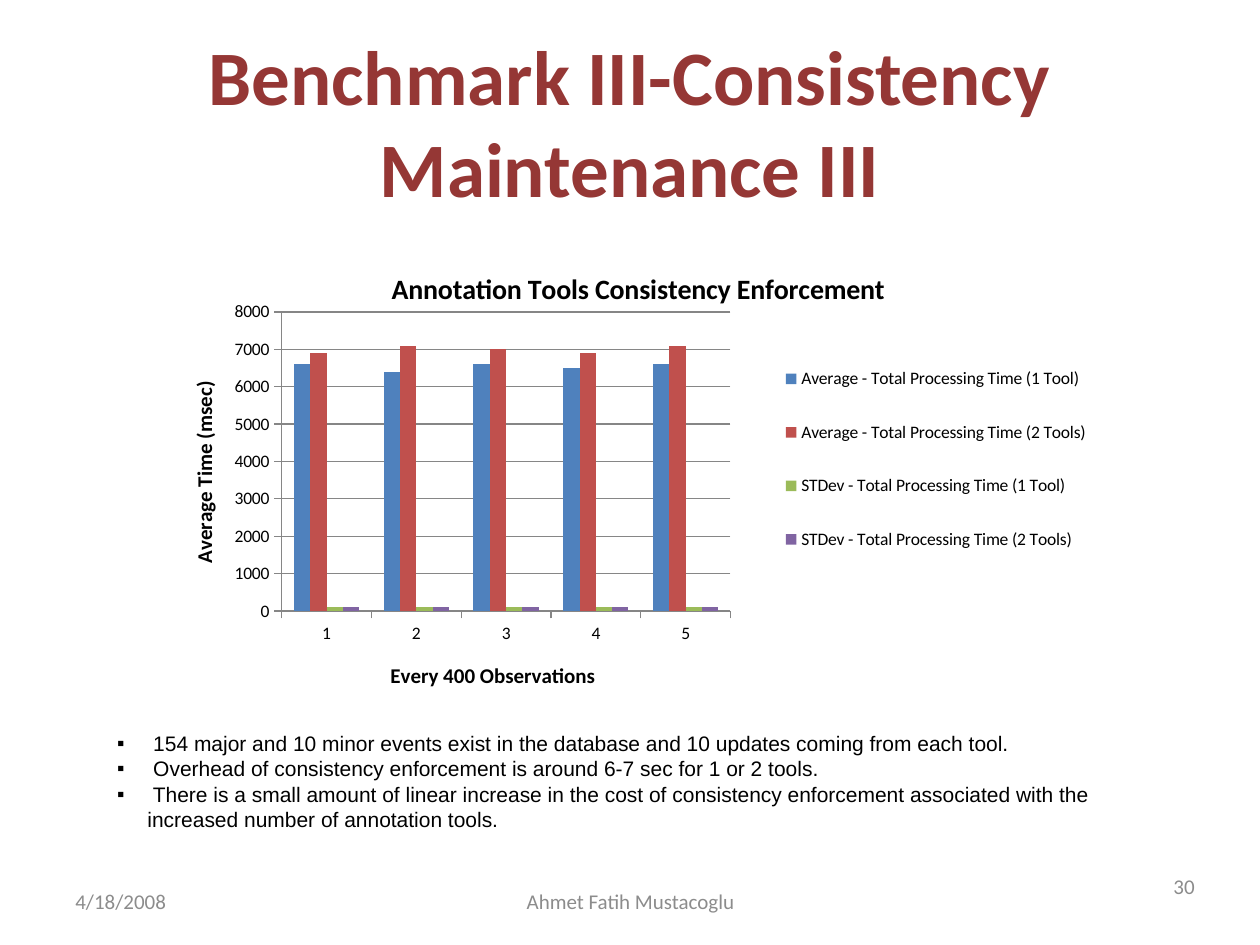
from lxml import etree
from pptx import Presentation
from pptx.chart.data import CategoryChartData
from pptx.dml.color import RGBColor
from pptx.enum.chart import XL_CHART_TYPE, XL_LEGEND_POSITION, XL_TICK_MARK
from pptx.enum.text import MSO_ANCHOR, MSO_AUTO_SIZE, PP_ALIGN
from pptx.oxml import parse_xml
from pptx.oxml.ns import nsdecls, qn
from pptx.util import Inches, Pt

THEME = {
    "title": dict(name="Calibri", size=Pt(44), bold=True, color="953735"),
    "footer": dict(name="Calibri", size=Pt(12), bold=False, color="8C8C8C"),
    "list": dict(name="Arial", size=Pt(12), bold=False, color="000000"),
    "chart": dict(name="Calibri", size=Pt(10), bold=False, color="000000"),
    "axis title": dict(name="Calibri", size=Pt(12), bold=True, color="000000"),
    "chart title": dict(name="Calibri", size=Pt(16), bold=True, color="000000"),
    "series": ["4F81BD", "C0504D", "9BBB59", "8064A2"],
    "line": "868686",
}


def style(font, role):
    for key, value in THEME[role].items():
        if key == "color":
            font.color.rgb = RGBColor.from_string(value)
        else:
            setattr(font, key, value)


def set_layout(element, index, inner=False, **fractions):
    """Place a chart part by fractions of the chart area."""
    old = element.find(qn("c:layout"))
    if old is not None:
        index = element.index(old)
        element.remove(old)
    target = '<c:layoutTarget val="inner"/>' if inner else ""
    modes = "".join(f'<c:{k}Mode val="edge"/>' for k in "xy")
    values = "".join(f'<c:{k} val="{v}"/>' for k, v in fractions.items())
    element.insert(index, parse_xml(
        f'<c:layout {nsdecls("c")}><c:manualLayout>{target}{modes}{values}'
        "</c:manualLayout></c:layout>"))


prs = Presentation()
prs.slide_width, prs.slide_height = Inches(10), Inches(7.5)
s = prs.slides.add_slide(prs.slide_layouts[1])
title, body = s.placeholders

# Title
title.left, title.top, title.width, title.height = map(Inches, (0.25, 0.17, 9.5, 1.58))
tf = title.text_frame
tf.text = "Benchmark III-Consistency Maintenance III"
tf.vertical_anchor = MSO_ANCHOR.MIDDLE
tf.paragraphs[0].alignment = PP_ALIGN.CENTER
style(tf.paragraphs[0].runs[0].font, "title")

# Slide number, date and author
for text, left, top, width, align in [
    ("30", 7.25, 6.83, 2.33, PP_ALIGN.RIGHT),
    ("4/18/2008", 0.5, 6.95, 2.33, PP_ALIGN.LEFT),
    ("Ahmet Fatih Mustacoglu", 3.42, 6.95, 3.17, PP_ALIGN.CENTER),
]:
    tf = s.shapes.add_textbox(*map(Inches, (left, top, width, 0.4))).text_frame
    tf.word_wrap = True
    tf.vertical_anchor = MSO_ANCHOR.MIDDLE
    p = tf.paragraphs[0]
    p.alignment = align
    r = p.add_run()
    r.text = text
    style(r.font, "footer")

# Chart data
data = CategoryChartData()
data.categories = ["1", "2", "3", "4", "5"]
for name, values in [
    ("Average - Total Processing Time (1 Tool)", (6600, 6400, 6600, 6500, 6600)),
    ("Average - Total Processing Time (2 Tools)", (6900, 7100, 7000, 6900, 7100)),
    ("STDev - Total Processing Time (1 Tool)", (100,) * 5),
    ("STDev - Total Processing Time (2 Tools)", (100,) * 5),
]:
    data.add_series(name, values)
chart = s.shapes.add_chart(XL_CHART_TYPE.COLUMN_CLUSTERED,
                           *map(Inches, (1.25, 1.92, 7.58, 3.71)), data).chart
style(chart.font, "chart")

# Columns
plot = chart.plots[0]
plot.gap_width, plot.overlap, plot.vary_by_categories = 150, 0, False
for series, color in zip(plot.series, THEME["series"]):
    series.format.fill.solid()
    series.format.fill.fore_color.rgb = RGBColor.from_string(color)
set_layout(chart._chartSpace.chart.plotArea, 0, inner=True,
           x=0.13, y=0.15, w=0.47, h=0.64)

# Axes
chart.value_axis.minimum_scale, chart.value_axis.maximum_scale = 0, 8000
chart.value_axis.major_unit = 1000
chart.value_axis.has_major_gridlines = True
line = RGBColor.from_string(THEME["line"])
chart.value_axis.major_gridlines.format.line.color.rgb = line
for axis in (chart.category_axis, chart.value_axis):
    axis.major_tick_mark = XL_TICK_MARK.OUTSIDE
    axis.format.line.color.rgb = line
    style(axis.tick_labels.font, "chart")

# Chart and axis titles
chart.has_title = True
for part, text, role, x, y in [
    (chart.chart_title, "Annotation Tools Consistency Enforcement", "chart title", 0.24, 0.05),
    (chart.category_axis.axis_title, "Every 400 Observations", "axis title", 0.24, 0.89),
    (chart.value_axis.axis_title, "Average Time (msec)", "axis title", 0.03, 0.29),
]:
    part.text_frame.text = text
    style(part.text_frame.paragraphs[0].runs[0].font, role)
    set_layout(part._element, 1, x=x, y=y)

# Legend
chart.has_legend = True
chart.legend.position = XL_LEGEND_POSITION.RIGHT
chart.legend.include_in_layout = False
style(chart.legend.font, "chart")
set_layout(chart.legend._element, 1, x=0.64, y=0.2, w=0.35, h=0.53)

# Findings
body.left, body.top, body.width, body.height = map(Inches, (0.83, 5.75, 8.25, 0.91))
tf = body.text_frame
tf.word_wrap = True
tf.auto_size = MSO_AUTO_SIZE.NONE
tf.vertical_anchor = MSO_ANCHOR.TOP
for i, text in enumerate([
    " 154 major and 10 minor events exist in the database and 10 updates coming from each tool.",
    " Overhead of consistency enforcement is around 6-7 sec for 1 or 2 tools.",
    " There is a small amount of linear increase in the cost of consistency enforcement "
    "associated with the increased number of annotation tools.",
]):
    p = tf.add_paragraph() if i else tf.paragraphs[0]
    p.space_before = p.space_after = Pt(0)
    r = p.add_run()
    r.text = text
    style(r.font, "list")
    pPr = p._p.get_or_add_pPr()
    pPr.set("marL", str(Inches(0.24)))
    pPr.set("indent", str(-Inches(0.24)))
    etree.SubElement(pPr, qn("a:buFont"), typeface="Arial")
    etree.SubElement(pPr, qn("a:buChar"), char="▪")

prs.save("out.pptx")
